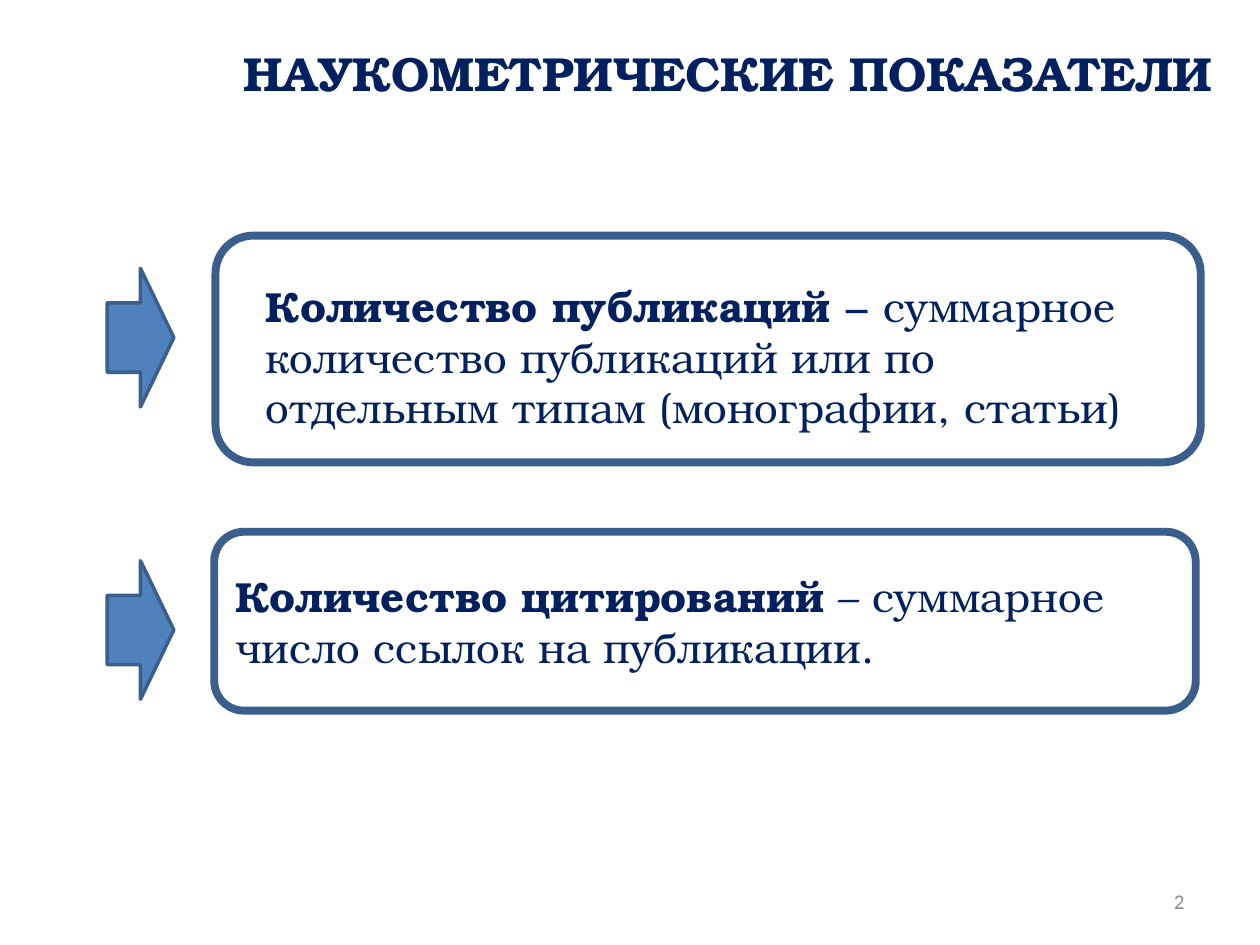
from pptx import Presentation
from pptx.dml.color import RGBColor
from pptx.enum.shapes import MSO_SHAPE
from pptx.enum.text import MSO_ANCHOR, PP_ALIGN
from pptx.util import Inches, Pt

ROUNDED, ARROW = MSO_SHAPE.ROUNDED_RECTANGLE, MSO_SHAPE.RIGHT_ARROW
LEFT, CENTER, RIGHT = PP_ALIGN.LEFT, PP_ALIGN.CENTER, PP_ALIGN.RIGHT
TOP, MIDDLE = MSO_ANCHOR.TOP, MSO_ANCHOR.MIDDLE
SERIF, SANS = "TeX Gyre Bonum", "Calibri"
NAVY, OUTLINE, BLUE, GRAY, WHITE = "002060", "3A5F8C", "4F81BD", "8C8C8C", "FFFFFF"


def color(hex_string):
    return RGBColor.from_string(hex_string)


def write(shape, runs, size=24, font=SERIF, ink=NAVY, align=LEFT, anchor=TOP):
    """Fill the shape with one paragraph of (text, bold) runs."""
    frame = shape.text_frame
    frame.word_wrap = True
    frame.vertical_anchor = anchor
    paragraph = frame.paragraphs[0]
    paragraph.alignment = align
    for text, bold in runs:
        run = paragraph.add_run()
        run.text = text
        run.font.name = font
        run.font.size = Pt(size)
        run.font.bold = bold
        run.font.color.rgb = color(ink)


def add_text_box(slide, box, runs, **style):
    write(slide.shapes.add_textbox(*map(Inches, box)), runs, **style)


def add_outlined_shape(slide, kind, box, fill, line_width):
    shape = slide.shapes.add_shape(kind, *map(Inches, box))
    shape.shadow.inherit = False
    shape.fill.solid()
    shape.fill.fore_color.rgb = color(fill)
    shape.line.color.rgb = color(OUTLINE)
    shape.line.width = Pt(line_width)
    return shape


def main():
    presentation = Presentation()
    presentation.slide_width, presentation.slide_height = Inches(10), Inches(7.5)
    slide = presentation.slides.add_slide(presentation.slide_layouts[6])

    add_text_box(slide, (1.56, 0.3, 8.44, 0.69),
                 [("НАУКОМЕТРИЧЕСКИЕ ПОКАЗАТЕЛИ", True)], size=27.3, align=CENTER)
    add_text_box(slide, (7.17, 6.95, 2.33, 0.4), [("2", False)],
                 size=12, font=SANS, ink=GRAY, align=RIGHT, anchor=MIDDLE)

    add_outlined_shape(slide, ROUNDED, (1.71, 1.87, 7.82, 1.8), WHITE, 4.5)
    add_text_box(slide, (2.01, 2.18, 7.17, 1.31), [
        ("Количество публикаций ", True),
        ("− суммарное количество публикаций или по отдельным типам "
         "(монографии, статьи)", False)])

    citations = add_outlined_shape(slide, ROUNDED, (1.7, 4.22, 7.79, 1.42), WHITE, 4.5)
    write(citations, [
        ("Количество цитирований ", True),
        ("– суммарное число ссылок на публикации.", False)], anchor=MIDDLE)

    for top in (2.13, 4.45):
        add_outlined_shape(slide, ARROW, (0.85, top, 0.53, 1.1), BLUE, 2)

    presentation.save("out.pptx")


if __name__ == "__main__":
    main()
